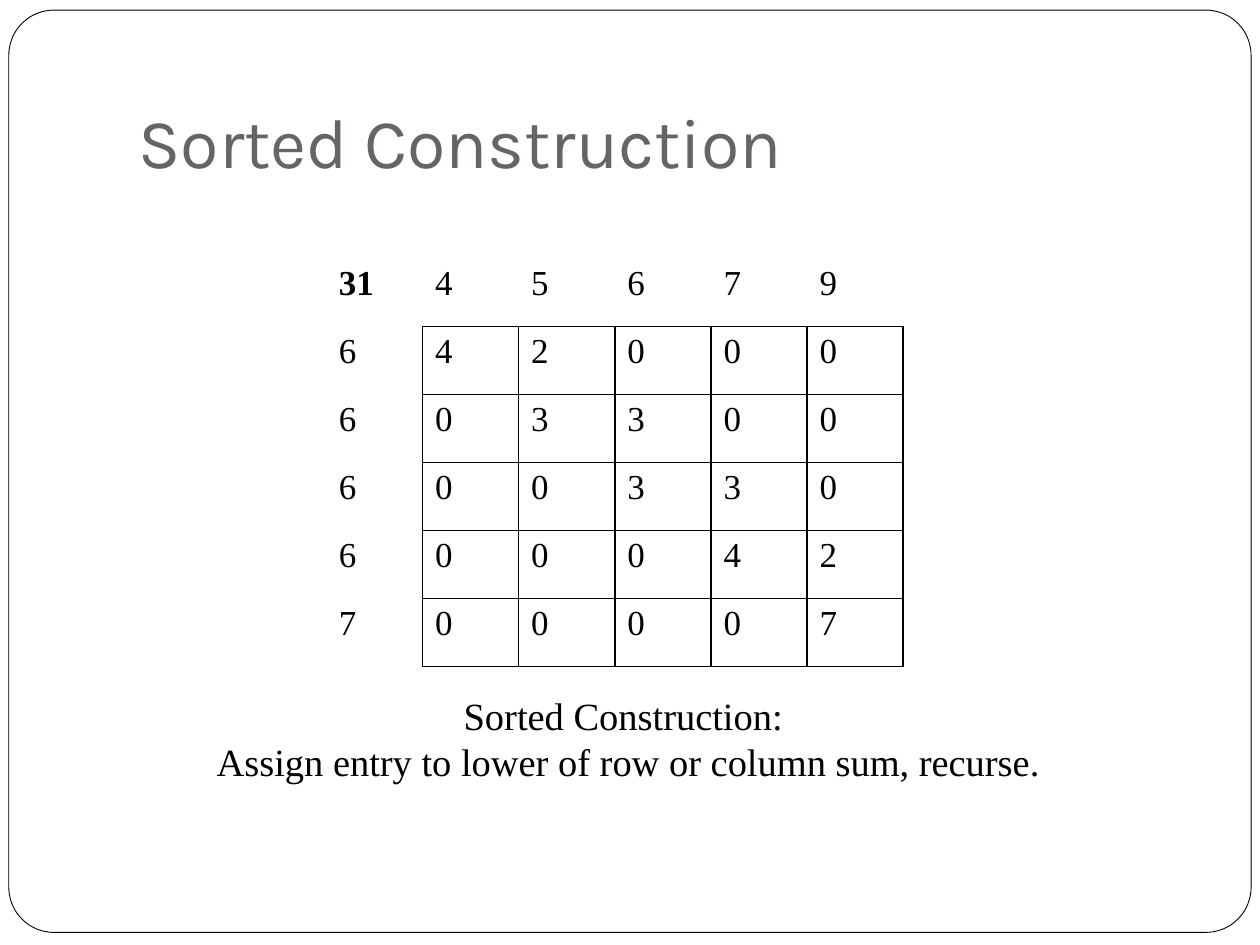
from lxml.etree import SubElement
from pptx import Presentation
from pptx.dml.color import RGBColor as RGB
from pptx.enum.shapes import MSO_SHAPE as SHAPE
from pptx.enum.text import MSO_ANCHOR as ANCHOR, MSO_AUTO_SIZE as AUTO, PP_ALIGN as ALIGN
from pptx.oxml.ns import qn
from pptx.util import Inches, Pt

COLORS = {"paper": "FFFFFF", "ink": "000000", "title": "696464"}
SERIF = "Times New Roman"


def style(para, text, size, face, color, bold=False):
    run = para.add_run()
    run.text = text
    form = {"size": Pt(size), "name": face, "bold": bold}
    for key, value in form.items():
        setattr(run.font, key, value)
    run.font.color.rgb = RGB.from_string(COLORS[color])


def border(cell, sides):
    props = cell._tc.get_or_add_tcPr()
    for side in "LRTB":
        line = SubElement(props, qn(f"a:ln{side}"), w=str(Pt(1)))
        if side in sides:
            fill = SubElement(line, qn("a:solidFill"))
            SubElement(fill, qn("a:srgbClr"), val=COLORS["ink"])
        else:
            SubElement(line, qn("a:noFill"))


deck = Presentation()
deck.slide_width, deck.slide_height = Inches(10), Inches(7.5)
slide = deck.slides.add_slide(deck.slide_layouts[5])
shapes = slide.shapes

title = shapes.title
frame = shapes.add_shape(SHAPE.ROUNDED_RECTANGLE, Inches(0.07), Inches(0.08),
                         Inches(9.86), Inches(7.32))
frame.adjustments[0] = 0.049
frame.shadow.inherit = False
frame.fill.solid()
frame.fill.fore_color.rgb = RGB.from_string(COLORS["paper"])
frame.line.color.rgb = RGB.from_string(COLORS["ink"])
frame.line.width = Pt(0.5)
title._element.addprevious(frame._element)

place = {"left": 1, "top": 0.3, "width": 8.5, "height": 1.25}
for key, value in place.items():
    setattr(title, key, Inches(value))
body = title.text_frame
form = {"vertical_anchor": ANCHOR.BOTTOM, "auto_size": AUTO.NONE, "word_wrap": True,
        "margin_left": Inches(0.1), "margin_right": Inches(0.1),
        "margin_top": Inches(0.05), "margin_bottom": Inches(0.1)}
for key, value in form.items():
    setattr(body, key, value)
body.paragraphs[0].alignment = ALIGN.LEFT
style(body.paragraphs[0], "Sorted Construction", 40, "Karla", "title")

rows = [
    [31, 4, 5, 6, 7, 9],
    [6, 4, 2, 0, 0, 0],
    [6, 0, 3, 3, 0, 0],
    [6, 0, 0, 3, 3, 0],
    [6, 0, 0, 0, 4, 2],
    [7, 0, 0, 0, 0, 7],
]
table = shapes.add_table(len(rows), len(rows[0]), Inches(2.59), Inches(2.05),
                         Inches(4.58), Inches(3.24)).table
table.first_row = table.horz_banding = False
for r, row in enumerate(rows):
    for c, value in enumerate(row):
        cell = table.cell(r, c)
        if r and c:
            sides = "LRTB"
        elif c:
            sides = "B"
        else:
            sides = "R" if r else ""
        border(cell, sides)
        cell.fill.background()
        style(cell.text_frame.paragraphs[0], str(value), 20, SERIF, "ink", r == c == 0)

note = shapes.add_textbox(Inches(0.35), Inches(5.44), Inches(9.27), Inches(0.84))
body = note.text_frame
body.word_wrap = True
body.auto_size = AUTO.SHAPE_TO_FIT_TEXT
lines = ["Sorted Construction: ", "Assign entry to lower of row or column sum, recurse."]
for i, text in enumerate(lines):
    para = body.add_paragraph() if i else body.paragraphs[0]
    para.alignment = ALIGN.CENTER
    style(para, text, 22, SERIF, "ink")

deck.save("out.pptx")
